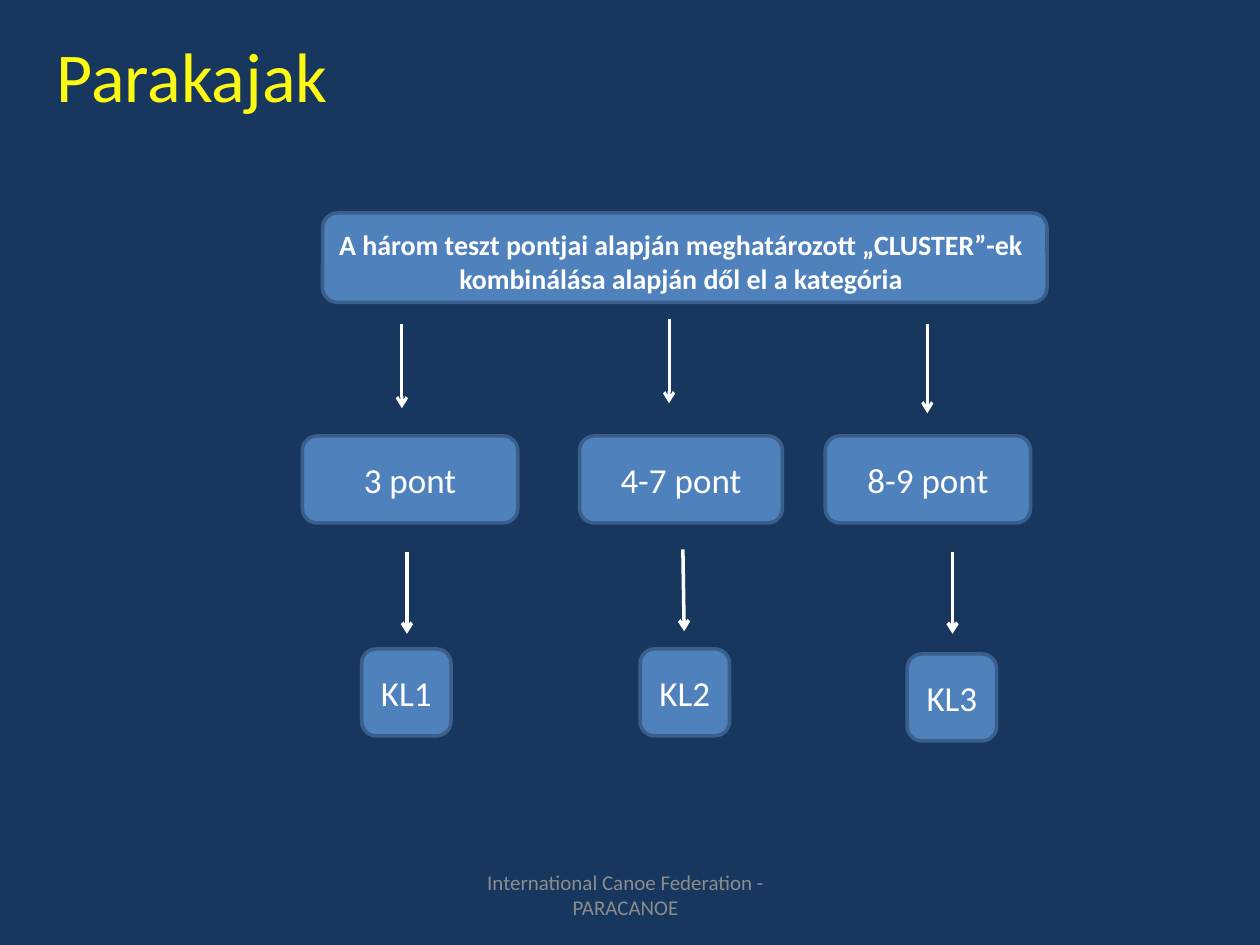
from lxml.etree import SubElement
from pptx import Presentation
from pptx.dml.color import RGBColor
from pptx.enum.shapes import MSO_CONNECTOR as Link, MSO_SHAPE as Shape
from pptx.enum.text import MSO_ANCHOR as Anchor, PP_ALIGN as Align
from pptx.oxml.ns import qn
from pptx.util import Inches, Pt

COLORS = {
    "back": "17375E",
    "box": "4F81BD",
    "edge": "3A5F8C",
    "white": "FFFFFF",
    "title": "FEF913",
    "foot": "8C8C8C",
}
FONT = "Calibri"
BOX_H = 0.69

# Score label, box left and width, then arrow x, top and bottom
SCORES = [
    ("3 pont", 2.4, 1.71, 3.19, 2.57, 3.24),
    ("4-7 pont", 4.6, 1.61, 5.31, 2.53, 3.2),
    ("8-9 pont", 6.55, 1.63, 7.36, 2.57, 3.28),
]
# Class label, box left and top, then arrow start x, end x and top
CLASSES = [
    ("KL1", 2.87, 5.15, 3.23, 3.23, 4.38),
    ("KL2", 5.08, 5.15, 5.42, 5.43, 4.36),
    ("KL3", 7.2, 5.19, 7.56, 7.56, 4.38),
]


def color(name):
    return RGBColor.from_string(COLORS[name])


def write(shape, text, size=20, tint="white", bold=False,
          align=Align.CENTER, anchor=Anchor.MIDDLE):
    frame = shape.text_frame
    frame.word_wrap = True
    frame.vertical_anchor = anchor
    para = frame.paragraphs[0]
    para.text = text
    para.alignment = align
    font = para.font
    font.name, font.size, font.bold = FONT, Pt(size), bold
    font.color.rgb = color(tint)


def add_title(slide, text):
    title = slide.shapes.title
    title.left, title.top = Inches(0.35), Inches(0.21)
    title.width, title.height = Inches(3.78), Inches(0.77)
    write(title, text, size=40, tint="title", align=Align.LEFT, anchor=Anchor.TOP)


def add_label(slide, text, left, top, width, height, **style):
    area = map(Inches, (left, top, width, height))
    write(slide.shapes.add_textbox(*area), text, **style)


def add_box(slide, left, top, width, height, text=None):
    area = map(Inches, (left, top, width, height))
    box = slide.shapes.add_shape(Shape.FLOWCHART_ALTERNATE_PROCESS, *area)
    box.shadow.inherit = False
    box.fill.solid()
    box.fill.fore_color.rgb = color("box")
    box.line.color.rgb = color("edge")
    box.line.width = Pt(2)
    if text:
        write(box, text)


def add_arrow(slide, x1, y1, x2, y2, width):
    ends = map(Inches, (x1, y1, x2, y2))
    arrow = slide.shapes.add_connector(Link.STRAIGHT, *ends)
    arrow.line.color.rgb = color("white")
    arrow.line.width = Pt(width)
    SubElement(arrow.line._get_or_add_ln(), qn("a:tailEnd"), type="arrow")
    SubElement(arrow._element.spPr, qn("a:effectLst"))


def main():
    deck = Presentation()
    deck.slide_width, deck.slide_height = Inches(10), Inches(7.5)
    slide = deck.slides.add_slide(deck.slide_layouts[5])
    slide.background.fill.solid()
    slide.background.fill.fore_color.rgb = color("back")

    add_title(slide, "Parakajak")
    add_box(slide, 2.56, 1.69, 5.75, 0.71)
    add_label(slide, "A három teszt pontjai alapján meghatározott „CLUSTER”-ek "
              "kombinálása alapján dől el a kategória",
              2.56, 1.76, 5.69, 0.64, size=16, bold=True, anchor=Anchor.TOP)

    for text, left, width, x, top, end in SCORES:
        add_arrow(slide, x, top, x, end, 1.75)
        add_box(slide, left, 3.46, width, BOX_H, text)

    for text, left, top, x1, x2, start in CLASSES:
        add_arrow(slide, x1, start, x2, start + 0.65, 2)
        add_box(slide, left, top, 0.71, BOX_H, text)

    add_label(slide, "International Canoe Federation - PARACANOE",
              3.38, 6.9, 3.17, 0.4, size=12, tint="foot")
    deck.save("out.pptx")


if __name__ == "__main__":
    main()
